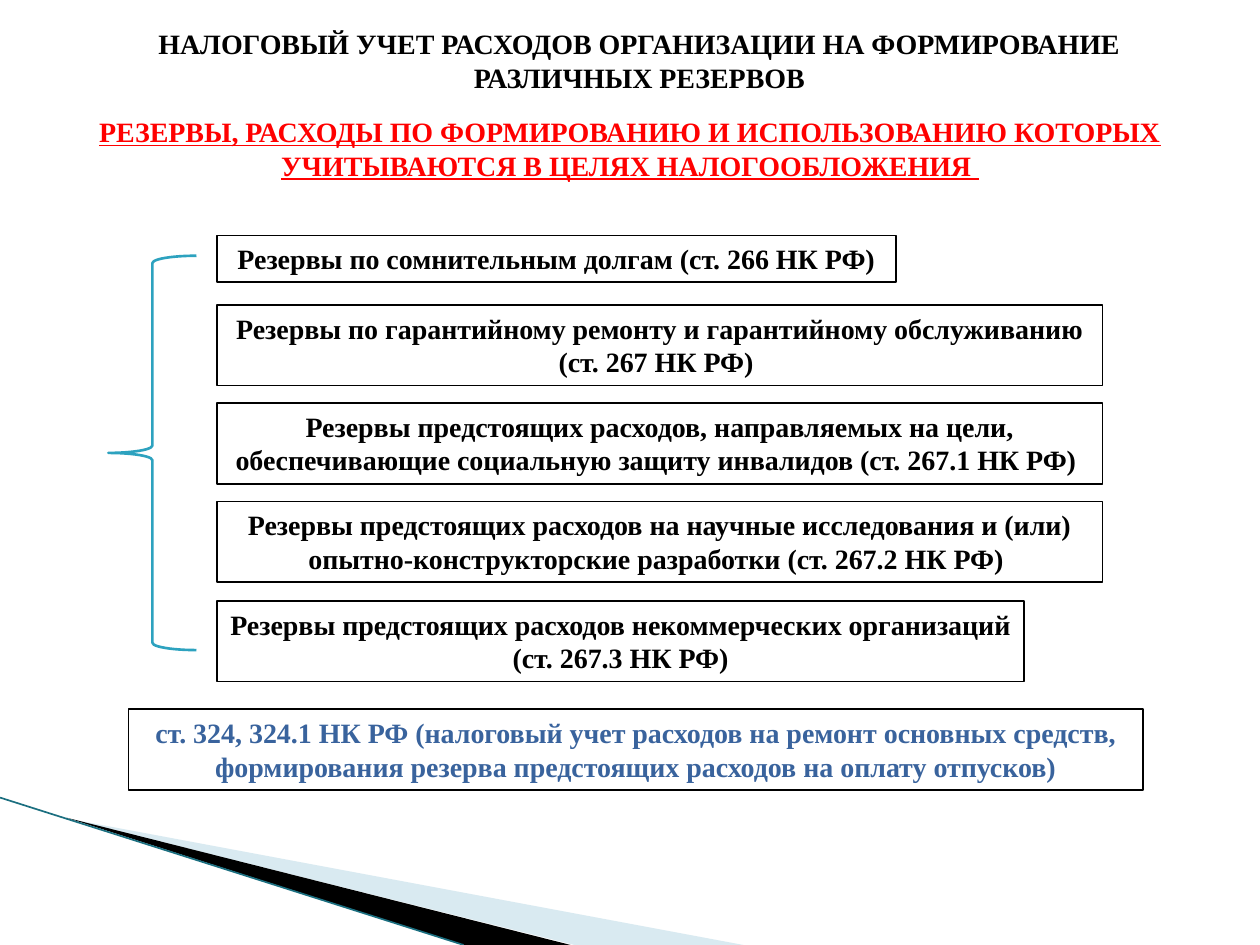
from dataclasses import dataclass

from lxml import etree
from pptx import Presentation
from pptx.dml.color import RGBColor
from pptx.enum import shapes, text
from pptx.oxml.ns import qn
from pptx.util import Inches, Pt

FONT = "Times New Roman"
BLACK, WHITE, RED, BLUE, TEAL = "000000", "FFFFFF", "FF0000", "39639D", "2DA2BF"
RESERVE_LEFT = 1.72
TWO_LINES = 0.64


@dataclass
class Box:
    wording: str
    left: float
    top: float
    width: float
    height: float = TWO_LINES
    color: str = BLACK
    border: str | None = BLACK
    underline: bool = False


@dataclass
class Wedge:
    points: list[tuple[float, float]]
    color: str
    opacity: int = 100


TITLE = Box("НАЛОГОВЫЙ УЧЕТ РАСХОДОВ ОРГАНИЗАЦИИ НА ФОРМИРОВАНИЕ РАЗЛИЧНЫХ РЕЗЕРВОВ",
            0.62, 0.16, 8.91)

BOXES = [
    Box("РЕЗЕРВЫ, РАСХОДЫ ПО ФОРМИРОВАНИЮ И ИСПОЛЬЗОВАНИЮ КОТОРЫХ УЧИТЫВАЮТСЯ "
        "В ЦЕЛЯХ НАЛОГООБЛОЖЕНИЯ ", 0.47, 0.86, 9.06,
        color=RED, border=None, underline=True),
    Box("Резервы по сомнительным долгам (ст. 266 НК РФ)",
        RESERVE_LEFT, 1.87, 5.39, 0.37),
    Box("Резервы по гарантийному ремонту и гарантийному обслуживанию "
        "(ст. 267 НК РФ) ", RESERVE_LEFT, 2.42, 7.03),
    Box("Резервы предстоящих расходов, направляемых на цели, обеспечивающие "
        "социальную защиту инвалидов (ст. 267.1 НК РФ) ", RESERVE_LEFT, 3.2, 7.03),
    Box("Резервы предстоящих расходов на научные исследования и (или) "
        "опытно-конструкторские разработки (ст. 267.2 НК РФ) ",
        RESERVE_LEFT, 3.98, 7.03),
    Box("Резервы предстоящих расходов некоммерческих организаций "
        "(ст. 267.3 НК РФ)", RESERVE_LEFT, 4.77, 6.41),
    Box("ст. 324, 324.1 НК РФ (налоговый учет расходов на ремонт основных средств, "
        "формирования резерва предстоящих расходов на оплату отпусков)",
        1.02, 5.63, 8.05, color=BLUE),
]

WEDGES = [
    Wedge([(0.55, 6.5), (5.9, 7.5), (4.56, 7.5)], "A0CBDC", 40),
    Wedge([(0.53, 6.49), (4.53, 7.5), (3.68, 7.5)], BLACK),
]


def rgb(color: str) -> RGBColor:
    return RGBColor.from_string(color)


def write(shape, box: Box) -> None:
    frame = shape.text_frame
    frame.text = box.wording
    frame.word_wrap = True
    frame.auto_size = text.MSO_AUTO_SIZE.NONE
    frame.vertical_anchor = text.MSO_ANCHOR.TOP
    paragraph = frame.paragraphs[0]
    paragraph.alignment = text.PP_ALIGN.CENTER
    font = paragraph.runs[0].font
    font.name, font.size, font.bold = FONT, Pt(16), True
    font.underline = box.underline
    font.color.rgb = rgb(box.color)


def add_box(slide, box: Box) -> None:
    rectangle = slide.shapes.add_shape(
        shapes.MSO_SHAPE.RECTANGLE, Inches(box.left), Inches(box.top),
        Inches(box.width), Inches(box.height))
    rectangle.shadow.inherit = False
    rectangle.fill.solid()
    rectangle.fill.fore_color.rgb = rgb(WHITE)
    if box.border:
        rectangle.line.color.rgb = rgb(box.border)
        rectangle.line.width = Pt(1)
    else:
        rectangle.line.fill.background()
    write(rectangle, box)


def add_wedge(slide, wedge: Wedge) -> None:
    start, *others = [(Inches(x), Inches(y)) for x, y in wedge.points]
    builder = slide.shapes.build_freeform(*start)
    builder.add_line_segments(others, close=True)
    outline = builder.convert_to_shape()
    outline.shadow.inherit = False
    outline.fill.solid()
    outline.fill.fore_color.rgb = rgb(wedge.color)
    outline.line.fill.background()
    if wedge.opacity < 100:
        fill_color = outline.fill._xPr.find(qn("a:solidFill"))[0]
        etree.SubElement(fill_color, qn("a:alpha"), val=str(wedge.opacity * 1000))


def add_edge(slide) -> None:
    """Draw the thin slanted line along the lower left corner."""
    edge = slide.shapes.add_connector(
        shapes.MSO_CONNECTOR.STRAIGHT,
        Inches(0), Inches(6.33), Inches(3.68), Inches(7.5))
    edge.line.color.rgb = rgb("1B6F80")
    edge.line.width = Pt(0.95)
    etree.SubElement(edge._element.spPr, qn("a:effectLst"))


def add_brace(slide) -> None:
    brace = slide.shapes.add_shape(
        shapes.MSO_SHAPE.LEFT_BRACE,
        Inches(0.86), Inches(2.03), Inches(0.7), Inches(3.13))
    brace.shadow.inherit = False
    brace.fill.background()
    brace.line.color.rgb = rgb(TEAL)
    brace.line.width = Pt(1.5)


def main() -> None:
    deck = Presentation()
    deck.slide_width, deck.slide_height = Inches(10), Inches(7.5)
    slide = deck.slides.add_slide(deck.slide_layouts[5])

    for wedge in WEDGES:
        add_wedge(slide, wedge)
    add_edge(slide)

    title = slide.shapes.title
    title.left, title.top = Inches(TITLE.left), Inches(TITLE.top)
    title.width, title.height = Inches(TITLE.width), Inches(TITLE.height)
    write(title, TITLE)

    for box in BOXES:
        add_box(slide, box)
    add_brace(slide)
    deck.save("out.pptx")


if __name__ == "__main__":
    main()
